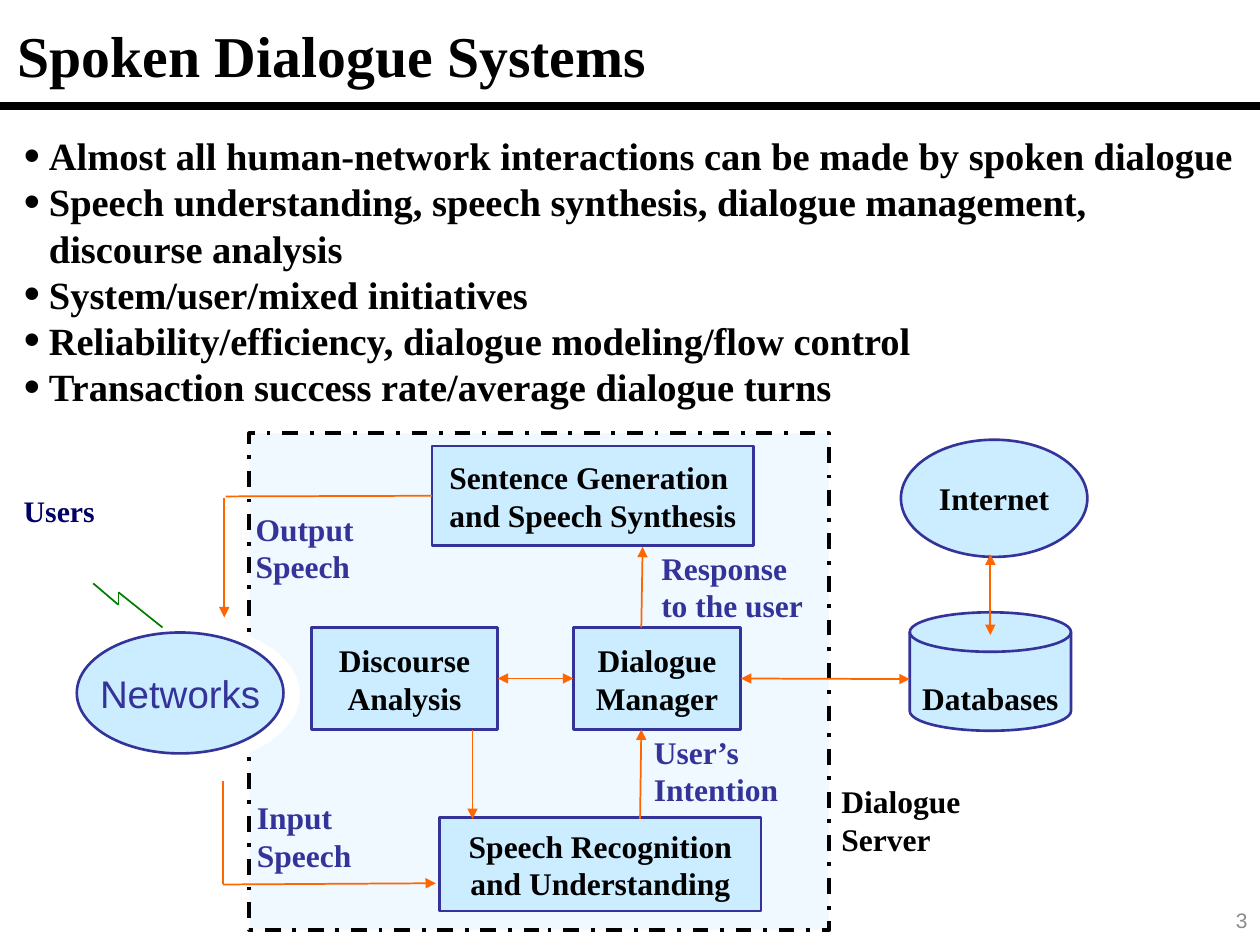
from dataclasses import dataclass
from typing import NamedTuple, Optional

from lxml import etree
from pptx import Presentation
from pptx.dml.color import RGBColor
from pptx.enum.dml import MSO_LINE
from pptx.enum.shapes import MSO_CONNECTOR, MSO_SHAPE
from pptx.enum.text import MSO_ANCHOR, MSO_AUTO_SIZE, PP_ALIGN
from pptx.oxml.ns import qn
from pptx.util import Inches, Pt

RECT, OVAL = MSO_SHAPE.RECTANGLE, MSO_SHAPE.OVAL
DISK = MSO_SHAPE.FLOWCHART_MAGNETIC_DISK
STRAIGHT, DASH = MSO_CONNECTOR.STRAIGHT, MSO_LINE.DASH_DOT
TOP, MID = MSO_ANCHOR.TOP, MSO_ANCHOR.MIDDLE
LEFT, CENTER, RIGHT = PP_ALIGN.LEFT, PP_ALIGN.CENTER, PP_ALIGN.RIGHT
SERIF, SANS = "Times New Roman", "Arial"
COLS, ROWS = 100, 75
WIDE, HIGH = Inches(10), Inches(7.5)
HEX = {
    "black": "000000", "white": "FFFFFF", "pale": "E1F4FF", "sky": "CCECFF",
    "blue": "333399", "navy": "000066", "orange": "FF6600",
    "green": "008000", "gray": "8C8C8C",
}


class Area(NamedTuple):
    """Left, top, width and height in columns and rows."""
    col: float
    row: float
    cols: float
    rows: float


@dataclass
class Node:
    name: str
    area: Area
    text: str
    kind: int = RECT
    size: float = 18
    font: str = SERIF
    ink: str = "black"
    bold: bool = True
    wrap: bool = True
    pad: tuple = (0.1, 0.05, 0.1, 0.05)


@dataclass
class Label:
    text: str
    area: Area
    ink: str = "blue"
    size: float = 18
    pad: tuple = (0.1, 0.05, 0.1, 0.05)


@dataclass
class Link:
    start: tuple
    end: tuple
    heads: str = ""  # "end" or "both"
    ink: str = "orange"
    width: float = 1
    tie: Optional[tuple] = None  # node name and side at the start
    join: Optional[tuple] = None  # node name and side at the end


def x(col: float) -> int:
    return round(WIDE * col / COLS)


def y(row: float) -> int:
    return round(HIGH * row / ROWS)


def box(area: Area) -> tuple:
    return x(area.col), y(area.row), x(area.cols), y(area.rows)


def tint(name: str) -> RGBColor:
    return RGBColor.from_string(HEX[name])


def write(shape, text: str, *, size=18, font=SERIF, ink="black", bold=True,
          align=LEFT, anchor=MID, wrap=True, pad=(0.1, 0.05, 0.1, 0.05),
          lead=None, bullet=False) -> None:
    frame = shape.text_frame
    frame.text = text
    frame.word_wrap, frame.vertical_anchor = wrap, anchor
    frame.auto_size = MSO_AUTO_SIZE.NONE
    (frame.margin_left, frame.margin_top,
     frame.margin_right, frame.margin_bottom) = map(Inches, pad)
    for para in frame.paragraphs:
        para.alignment = align
        if lead:
            para.line_spacing = lead
        if bullet:
            props = para._p.get_or_add_pPr()
            props.set("marL", str(Inches(0.2)))
            props.set("indent", str(-Inches(0.2)))
            for tag, key, value in (("a:buSzPct", "val", "120000"),
                                    ("a:buFont", "typeface", SANS),
                                    ("a:buChar", "char", "•")):
                etree.SubElement(props, qn(tag)).set(key, value)
        for run in para.runs:
            run.font.name, run.font.size, run.font.bold = font, Pt(size), bold
            run.font.color.rgb = tint(ink)


def draw(slide, kind: int, area: Area, fill: str, edge: str = "", width: float = 1.5):
    shape = slide.shapes.add_shape(kind, *box(area))
    shape.shadow.inherit = False
    shape.fill.solid()
    shape.fill.fore_color.rgb = tint(fill)
    if edge:
        shape.line.color.rgb, shape.line.width = tint(edge), Pt(width)
    else:
        shape.line.fill.background()
    return shape


def put(slide, text: str, area: Area, **form) -> None:
    write(slide.shapes.add_textbox(*box(area)), text, **form)


def place(slide, node: Node):
    shape = draw(slide, node.kind, node.area, "sky", "blue")
    write(shape, node.text, size=node.size, font=node.font, ink=node.ink,
          bold=node.bold, wrap=node.wrap, pad=node.pad, align=CENTER)
    return shape


def connect(slide, link: Link, nodes: dict) -> None:
    (ax, ay), (bx, by) = link.start, link.end
    line = slide.shapes.add_connector(STRAIGHT, x(ax), y(ay), x(bx), y(by))
    if link.tie:
        line.begin_connect(nodes[link.tie[0]], link.tie[1])
    if link.join:
        line.end_connect(nodes[link.join[0]], link.join[1])
    line.line.color.rgb, line.line.width = tint(link.ink), Pt(link.width)
    stroke = line.line._get_or_add_ln()
    tags = {"end": ["a:tailEnd"], "both": ["a:headEnd", "a:tailEnd"]}
    for tag in tags.get(link.heads, []):
        etree.SubElement(stroke, qn(tag)).set("type", "triangle")
    etree.SubElement(line._element.spPr, qn("a:effectLst"))


POINTS = [
    "Almost all human-network interactions can be made by spoken dialogue",
    "Speech understanding, speech synthesis, dialogue management, discourse analysis",
    "System/user/mixed initiatives",
    "Reliability/efficiency, dialogue modeling/flow control",
    "Transaction success rate/average dialogue turns",
]
NODES = [
    Node("data", Area(72.2, 48.6, 12.8, 9.4), "Databases", DISK, pad=(0, 0.26, 0, 0)),
    Node("speak", Area(34.3, 35.4, 25.5, 7.9), "Sentence Generation \nand Speech Synthesis"),
    Node("manage", Area(45.5, 49.8, 13.3, 8.1), "Dialogue\nManager"),
    Node("hear", Area(34.9, 64.9, 25.5, 7.4), "Speech Recognition and Understanding"),
    Node("study", Area(24.7, 49.8, 14.8, 8.1), "Discourse Analysis"),
    Node("web", Area(71.5, 34.9, 14.8, 9.3), "Internet", OVAL, wrap=False),
    Node("net", Area(6.1, 50.2, 16.4, 9.6), "Networks", OVAL, 22, SANS, "blue", False, False),
]
LABELS = [
    Label("Output Speech", Area(19.3, 39.6, 11.9, 7.7)),
    Label("Input Speech", Area(19.4, 62.5, 11.9, 7.7)),
    Label("User’s Intention", Area(51.9, 57.3, 11, 7.7), pad=(0, 0.05, 0, 0.05)),
    Label("Response to the user", Area(51.5, 42.7, 14, 7.7)),
    Label("Users", Area(0.9, 38.6, 8, 3.8), "navy", 17),
    Label("Dialogue Server", Area(65.8, 61.2, 14.7, 7.7), "black"),
]
LINKS = [
    Link((50.9, 49.8), (51, 43.4), "end"),
    Link((34.3, 39.4), (17.9, 39.4), tie=("speak", 1)),
    Link((17.8, 39.5), (17.8, 49), "end"),
    Link((58.8, 53.9), (72.2, 53.9), "both", tie=("manage", 3)),
    Link((37.5, 57.9), (37.5, 65), "end"),
    Link((17.7, 70.2), (34.6, 70.1), "end"),
    Link((17.7, 62), (17.7, 70.2)),
    Link((39.5, 53.9), (45.5, 53.9), "both", tie=("study", 3), join=("manage", 1)),
    Link((50.8, 65), (50.9, 57.9), "end"),
    Link((78.6, 50.4), (78.6, 44), "both"),
    # Spark between users and networks
    Link((7.4, 46.3), (9.4, 48), ink="green"),
    Link((9.4, 48), (9.4, 47), ink="green"),
    Link((9.4, 47), (12.9, 49.8), ink="green"),
]


def main() -> None:
    deck = Presentation()
    deck.slide_width, deck.slide_height = WIDE, HIGH
    slide = deck.slides.add_slide(deck.slide_layouts[5])

    # Title, rule and bullets
    title = slide.shapes.title
    title.left, title.top, title.width, title.height = box(Area(0.4, 0.9, 99.6, 7.5))
    write(title, "Spoken Dialogue Systems", size=33, lead=0.9)
    connect(slide, Link((0, 8.4), (COLS, 8.4), ink="black", width=4.5), {})
    put(slide, "\n".join(POINTS), Area(0.9, 10, 99.1, 23), size=22, anchor=TOP, bullet=True)

    # Server frame, with a white gap around the networks
    server = draw(slide, RECT, Area(19.8, 34.4, 46, 39.4), "pale", "black", 2.25)
    server.line.dash_style = DASH
    shade = server._element.spPr.find(qn("a:solidFill"))[0]
    etree.SubElement(shade, qn("a:alpha")).set("val", "50000")
    draw(slide, OVAL, Area(5.4, 49.5, 18.4, 11.2), "white")

    # Diagram
    nodes = {node.name: place(slide, node) for node in NODES}
    for link in LINKS:
        connect(slide, link, nodes)
    for label in LABELS:
        put(slide, label.text, label.area, ink=label.ink, size=label.size, pad=label.pad)

    # Page number
    put(slide, "3", Area(77.5, 71, 22.5, 4), size=12, font=SANS, ink="gray",
        bold=False, align=RIGHT)
    deck.save("out.pptx")


if __name__ == "__main__":
    main()
